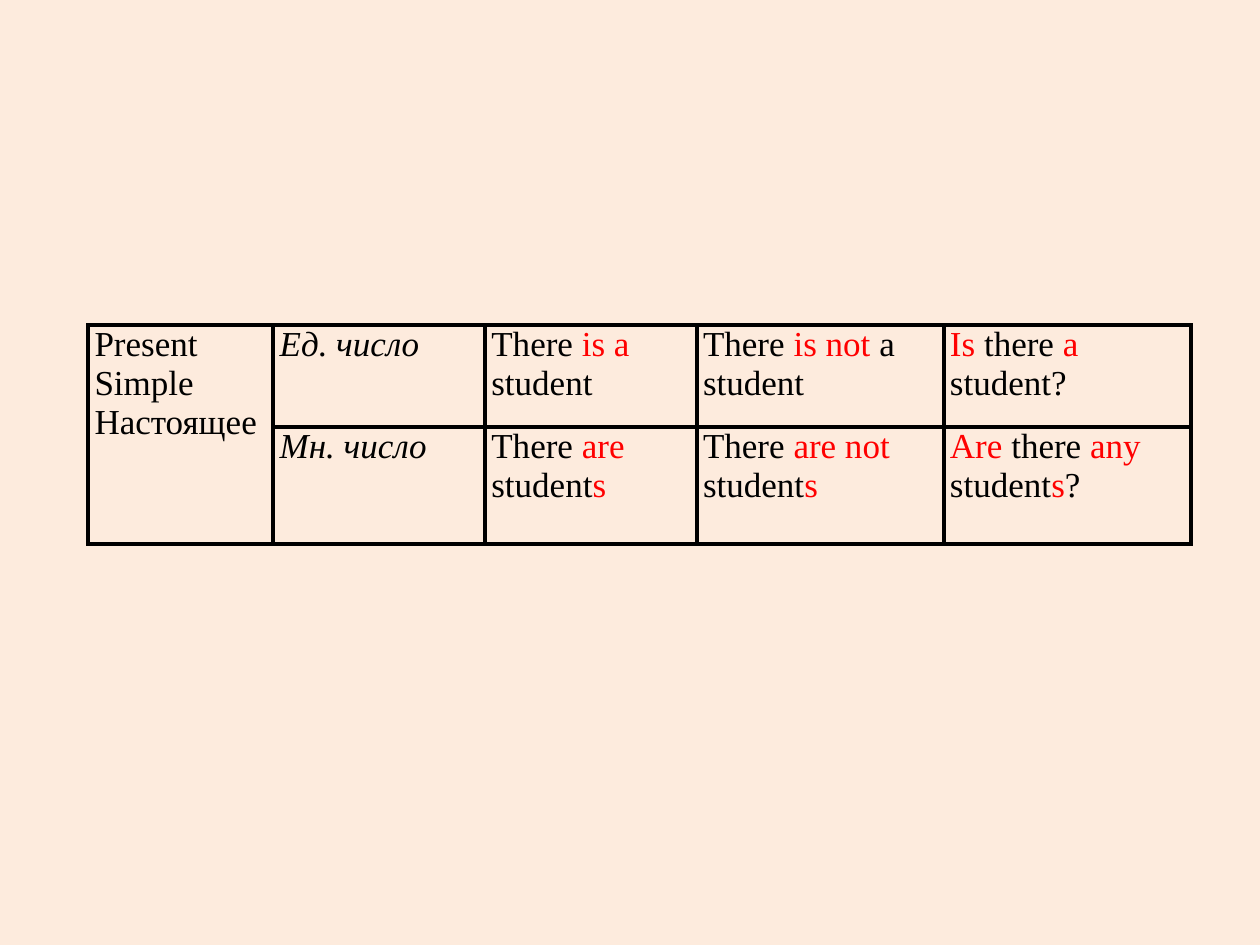
from pptx import Presentation
from pptx import util as u
from pptx.dml.color import RGBColor
from pptx.oxml import parse_xml
from pptx.oxml.ns import nsdecls

BLACK = RGBColor(0x00, 0x00, 0x00)
RED = RGBColor(0xFF, 0x00, 0x00)
CREAM = RGBColor(0xFD, 0xEB, 0xDD)
FONT = "Times New Roman"
COLS = [1.47, 1.68, 1.68, 1.96, 1.96]
ROWS = [0.81, 0.81]
TENSE = "Present Simple\nНастоящее"
FORMS = [
    ["Ед. число", "There |is a| student", "There |is not| a student",
     "|Is| there |a| student?"],
    ["Мн. число", "There |are| student|s", "There |are not| student|s",
     "|Are| there |any |student|s|?"],
]


def write(cell, words, slant=False):
    """Fill a cell with lines of words, where bars switch between black and red."""
    frame = cell.text_frame
    for row, line in enumerate(words.split("\n")):
        para = frame.add_paragraph() if row else frame.paragraphs[0]
        para.font.name = FONT
        para.font.size = u.Pt(20)
        para.font.italic = slant
        for turn, part in enumerate(line.split("|")):
            if part:
                run = para.add_run()
                run.text = part
                run.font.color.rgb = RED if turn % 2 else BLACK


def frame_cell(cell):
    """Give a cell black borders, narrow margins and no fill."""
    props = cell._tc.get_or_add_tcPr()
    for side in "LRTB":
        props.append(parse_xml(
            f'<a:ln{side} {nsdecls("a")} w="{u.Pt(2.5)}"><a:solidFill>'
            f'<a:srgbClr val="{BLACK}"/></a:solidFill></a:ln{side}>'))
    cell.fill.background()
    cell.margin_left = cell.margin_right = u.Inches(0.05)
    cell.margin_top = cell.margin_bottom = 0


def add_forms(slide, left, top, width, height):
    """Place the table of sentence forms in the given box."""
    table = slide.shapes.add_table(
        len(ROWS), len(COLS), left, top, width, height).table
    table.first_row = table.horz_banding = False
    for col, size in zip(table.columns, COLS):
        col.width = u.Inches(size)
    for row, size in zip(table.rows, ROWS):
        row.height = u.Inches(size)
    for cell in table.iter_cells():
        frame_cell(cell)
    table.cell(0, 0).merge(table.cell(1, 0))
    write(table.cell(0, 0), TENSE)
    for row, forms in enumerate(FORMS):
        for col, words in enumerate(forms, 1):
            write(table.cell(row, col), words, slant=col == 1)


def main():
    """Build the slide and save it."""
    deck = Presentation()
    deck.slide_width, deck.slide_height = u.Inches(10), u.Inches(7.5)
    slide = deck.slides.add_slide(deck.slide_layouts[6])
    slide.background.fill.solid()
    slide.background.fill.fore_color.rgb = CREAM
    add_forms(slide, u.Inches(0.7), u.Inches(2.58),
              u.Inches(sum(COLS)), u.Inches(sum(ROWS)))
    deck.save("out.pptx")


if __name__ == "__main__":
    main()
